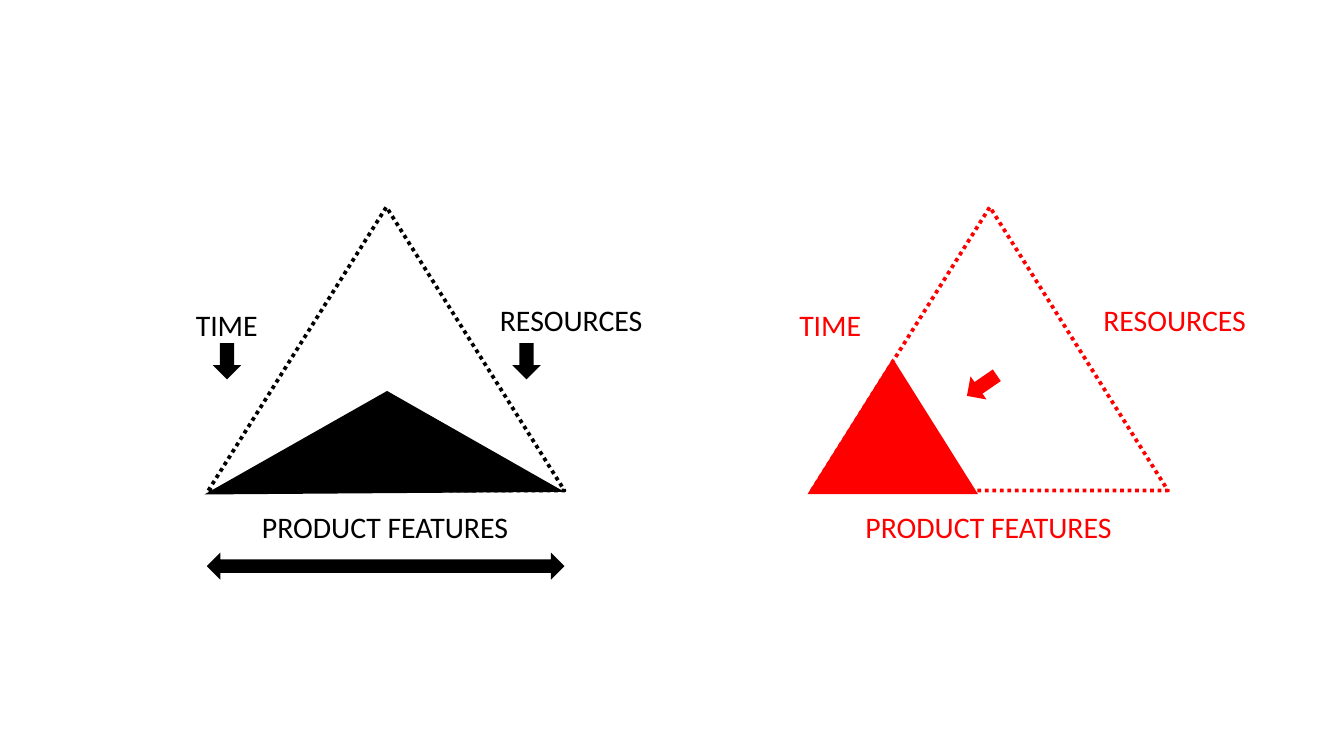
import pptx
import pptx.dml.color
import pptx.enum.dml
import pptx.enum.shapes
import pptx.enum.text
import pptx.util
from collections import namedtuple

SHAPES = pptx.enum.shapes.MSO_SHAPE
BLACK, RED = "000000", "FF0000"

Box = namedtuple("Box", "left top width height")

# Label text and its place, in percent of the dotted triangle's box
LABELS = (
    ("TIME", Box(-21.6, 32.2, 53.6, 18.5)),
    ("PRODUCT FEATURES", Box(0.6, 103.3, 98.1, 18.5)),
    ("RESOURCES", Box(70.6, 30.5, 62.6, 18.5)),
)
ARROW_SIZE = (7.9, 12.8)


def color(hex_string):
    return pptx.dml.color.RGBColor.from_string(hex_string)


def point(box, x, y):
    """Turn percentages of the box into a point on the slide."""
    return (round(box.left + box.width * x / 100),
            round(box.top + box.height * y / 100))


def part_of(box, share):
    return Box(*point(box, share.left, share.top),
               round(box.width * share.width / 100),
               round(box.height * share.height / 100))


def fill_plain(shape, hex_string):
    shape.shadow.inherit = False
    shape.fill.solid()
    shape.fill.fore_color.rgb = color(hex_string)
    shape.line.fill.background()


def add_filled(slide, kind, box, share, hex_string, rotation=0):
    shape = slide.shapes.add_shape(kind, *part_of(box, share))
    fill_plain(shape, hex_string)
    shape.rotation = rotation


def add_label(slide, text, box, hex_string):
    frame = slide.shapes.add_textbox(*box).text_frame
    frame.word_wrap = True
    frame.vertical_anchor = pptx.enum.text.MSO_ANCHOR.MIDDLE
    paragraph = frame.paragraphs[0]
    paragraph.alignment = pptx.enum.text.PP_ALIGN.CENTER
    run = paragraph.add_run()
    run.text = text
    run.font.name = "Calibri"
    run.font.size = pptx.util.Pt(16)
    run.font.color.rgb = color(hex_string)


def add_labelled_triangle(slide, box, hex_string):
    """Dotted triangle with one label per side."""
    triangle = slide.shapes.add_shape(SHAPES.ISOSCELES_TRIANGLE, *box)
    triangle.shadow.inherit = False
    triangle.fill.background()
    triangle.line.color.rgb = color(hex_string)
    triangle.line.width = pptx.util.Pt(2)
    triangle.line.dash_style = pptx.enum.dml.MSO_LINE.ROUND_DOT
    for text, share in LABELS:
        add_label(slide, text, part_of(box, share), hex_string)


def add_fixed_features(slide, box):
    """Same features with less time and fewer resources."""
    add_labelled_triangle(slide, box, BLACK)

    # Flattened triangle
    builder = slide.shapes.build_freeform(*point(box, -1.1, 101.4))
    builder.add_line_segments([point(box, 50.2, 64.9), point(box, 100, 100.5)])
    fill_plain(builder.convert_to_shape(), BLACK)

    # Arrows under the side labels and along the base
    for left in (1.3, 85.4):
        add_filled(slide, SHAPES.DOWN_ARROW, box,
                   Box(left, 48, *ARROW_SIZE), BLACK)
    add_filled(slide, SHAPES.LEFT_RIGHT_ARROW, box,
               Box(-0.4, 121.9, 100.4, 9.5), BLACK)


def add_reduced_scope(slide, box):
    """All three sides shrink together."""
    add_labelled_triangle(slide, box, RED)
    add_filled(slide, SHAPES.DOWN_ARROW, box,
               Box(43.8, 56.6, *ARROW_SIZE), RED, rotation=55.4)
    add_filled(slide, SHAPES.ISOSCELES_TRIANGLE, box,
               Box(-1.2, 53.4, 47.9, 47.9), RED)


def main():
    presentation = pptx.Presentation()
    presentation.slide_width = pptx.util.Inches(10)
    presentation.slide_height = presentation.slide_width * 9 // 16
    slide = presentation.slides.add_slide(presentation.slide_layouts[6])

    # The two triangles share a row
    for left, add_panel in ((1.55, add_fixed_features),
                            (6.04, add_reduced_scope)):
        lengths = (left, 1.54, 2.65, 2.11)
        add_panel(slide, Box(*map(pptx.util.Inches, lengths)))

    presentation.save("out.pptx")


if __name__ == "__main__":
    main()
